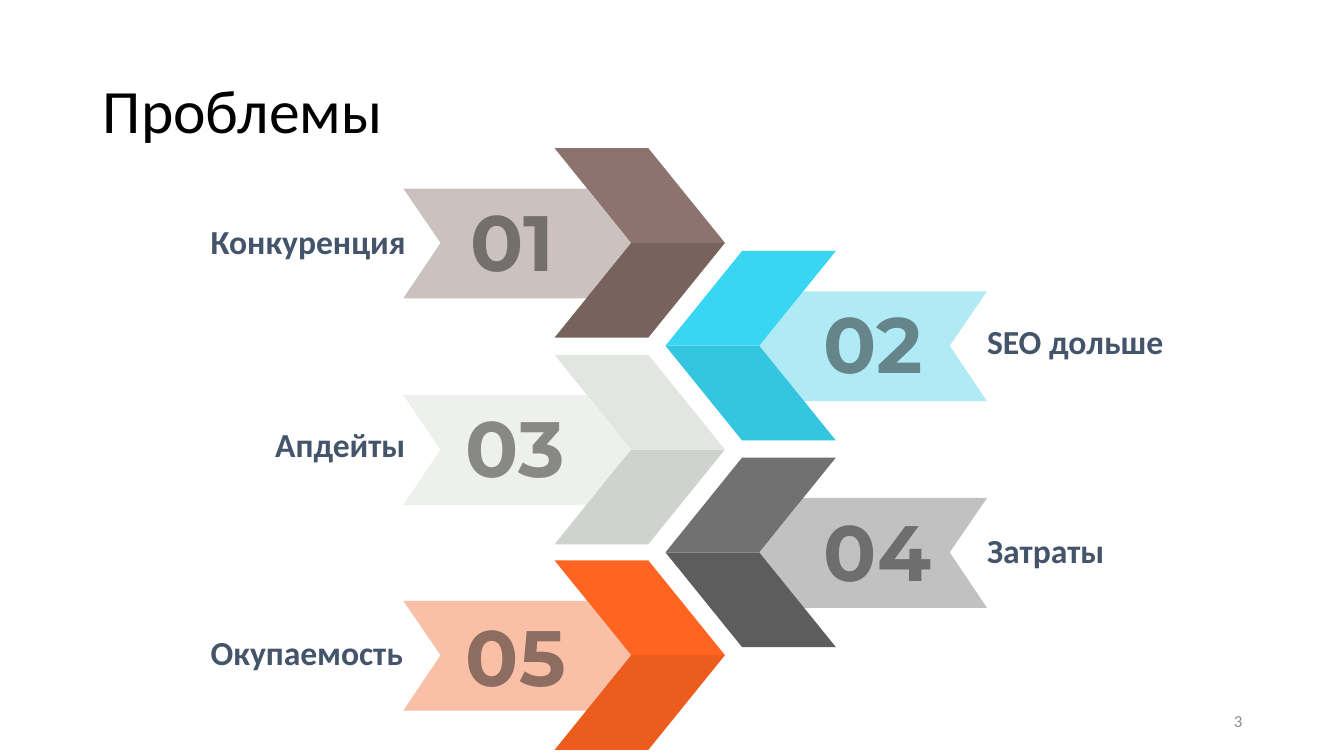
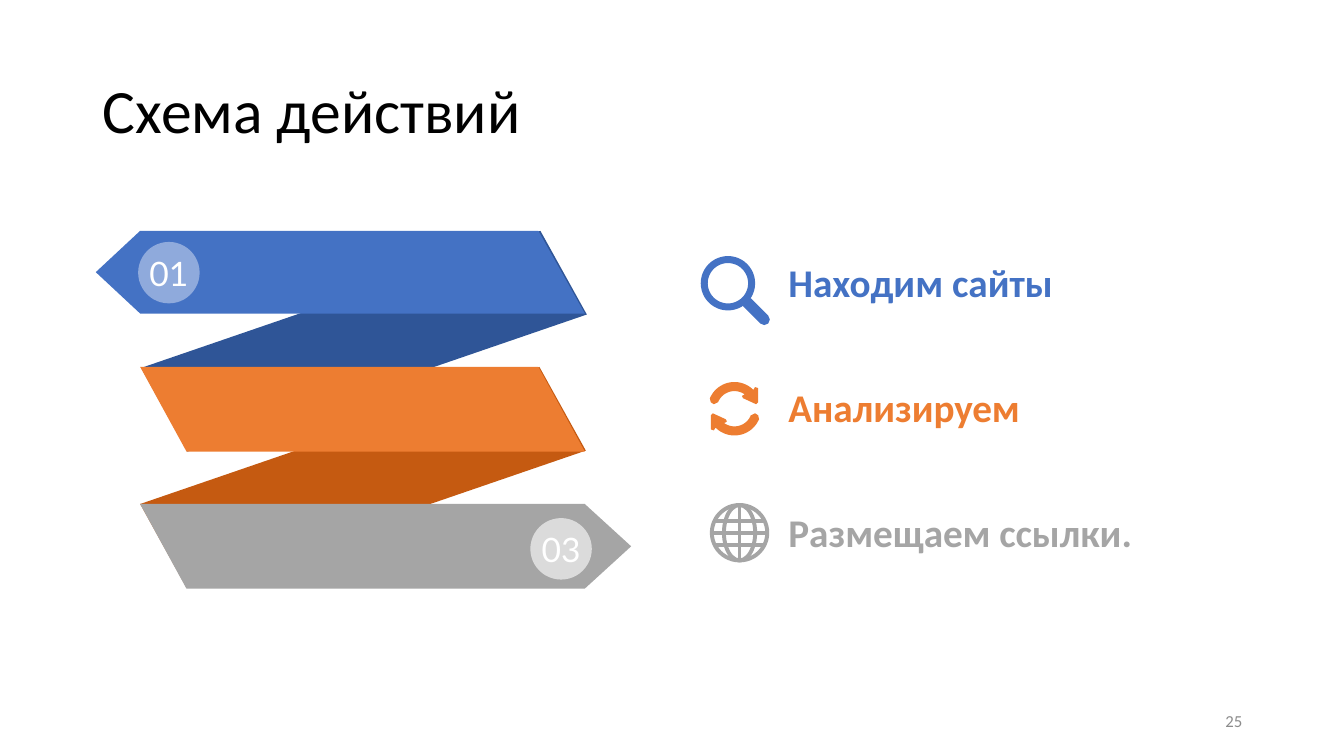
"""Two slides: numbered problem banners and a folded ribbon with three actions."""
from dataclasses import dataclass
from math import cos, radians, sin, sqrt

from lxml.etree import SubElement
from pptx import Presentation
from pptx.dml.color import RGBColor
from pptx.enum.shapes import MSO_CONNECTOR as Connector, MSO_SHAPE as Preset
from pptx.enum.text import MSO_ANCHOR as Anchor, MSO_AUTO_SIZE as AutoSize, PP_ALIGN as Align
from pptx.oxml.ns import qn
from pptx.util import Emu, Pt

PX = 9144
FONT, NUMBER_FONT, BADGE_FONT = "Calibri", "Montserrat", "Lato"
BLACK, WHITE, GRAY = "000000", "FFFFFF", "8C8C8C"
LABEL = "44546A"
BLUE, ORANGE, SILVER = "4472C4", "ED7D31", "A5A5A5"

BANNER_TOP, BANNER_STEP = 147, 102.25
RIBBON = [(32, 40), (76, 94), (32, 149), (-150, 149), (-113, 94), (-150, 40)]
UPPER_CHEVRON = [(0, 0), (93, 0), (169, 94), (76, 94)]
LOWER_CHEVRON = [(76, 94), (169, 94), (93, 188), (0, 188)]
FOLD = [(536, 229), (140, 365), (186, 448), (582, 312)]

Point = tuple[float, float]


@dataclass(frozen=True)
class Style:
    """Look of a one-line text."""
    size: int
    color: str
    font: str = FONT
    bold: bool = False
    align: Align = Align.LEFT
    spacing: float = 1.0


@dataclass(frozen=True)
class Banner:
    """Ribbon with a chevron, a number and a label beside it."""
    label: str
    label_at: Point
    number_at: Point
    number_color: str
    ribbon: str
    upper: str
    lower: str


@dataclass(frozen=True)
class Band:
    """Front strip of the folded ribbon."""
    color: str
    points: list[Point]


@dataclass(frozen=True)
class Badge:
    """Numbered disc on a band."""
    text: str
    left: int
    top: int
    color: str


@dataclass(frozen=True)
class Action:
    """Text line next to an icon."""
    text: str
    top: int
    color: str
    spacing: float = 1.0


BANNERS = [
    Banner("Конкуренция", (209, 219), (467, 192), "746F6D", "CBC2C0", "8C736D", "78625D"),
    Banner("SEO дольше", (979, 318), (817, 293), "65858A", "B0EAF4", "38D6F3", "34C5E0"),
    Banner("Апдейты", (273, 421), (462, 396), "888987", "EEF0ED", "E2E6E0", "CFD3CD"),
    Banner("Затраты", (979, 526), (817, 499), "6E6E6E", "C1C1C1", "717171", "5D5D5D"),
    Banner("Окупаемость", (209, 627), (462, 603), "8D6D60", "F9BFA7", "FF6420", "EC5D1D"),
]
BANDS = [
    Band(BLUE, [(580, 311), (139, 311), (95, 270), (139, 229), (534, 229)]),
    Band(ORANGE, [(580, 448), (185, 448), (139, 364), (534, 364)]),
    Band(SILVER, [(185, 584), (580, 584), (626, 542), (580, 500), (139, 500)]),
]
BADGES = [Badge("01", 137, 240, "8FAADC"), Badge("03", 526, 514, "DBDBDB")]
ACTIONS = [
    Action("Находим сайты", 250, BLUE),
    Action("Анализируем", 370, ORANGE, 1.1),
    Action("Размещаем ссылки.", 498, SILVER),
]


def px(value: float) -> Emu:
    """Turn pixels into EMU."""
    return Emu(round(value * PX))


def rgb(color: str) -> RGBColor:
    """Turn a hex string into a colour."""
    return RGBColor.from_string(color)


def write(shape, text: str, style: Style, anchor=Anchor.TOP, insets: Point = (0, 0)) -> None:
    """Put one styled paragraph into a shape."""
    frame = shape.text_frame
    frame.word_wrap = True
    frame.auto_size = AutoSize.NONE
    frame.vertical_anchor = anchor
    frame.margin_left = frame.margin_right = px(insets[0])
    frame.margin_top = frame.margin_bottom = px(insets[1])
    para = frame.paragraphs[0]
    para.text = text
    para.alignment = style.align
    para.line_spacing = style.spacing
    para.font.name, para.font.size = style.font, Pt(style.size)
    para.font.bold = style.bold
    para.font.color.rgb = rgb(style.color)


def add_text(page, left: int, top: int, width: int, height: int, text: str, style: Style,
             anchor=Anchor.TOP, insets: Point = (0, 0)) -> None:
    """Add a text box."""
    box = page.shapes.add_textbox(px(left), px(top), px(width), px(height))
    write(box, text, style, anchor, insets)


def add_outline(page, points: list[Point], color: str) -> None:
    """Add a filled polygon."""
    corners = [(px(x), px(y)) for x, y in points]
    builder = page.shapes.build_freeform(*corners[0])
    builder.add_line_segments(corners[1:], close=True)
    shape = builder.convert_to_shape()
    shape.shadow.inherit = False
    shape.fill.solid()
    shape.fill.fore_color.rgb = rgb(color)
    shape.line.fill.background()


def add_disc(page, left: float, top: float, width: float, height: float, color: str):
    """Add a filled oval."""
    disc = page.shapes.add_shape(Preset.OVAL, px(left), px(top), px(width), px(height))
    disc.shadow.inherit = False
    disc.fill.solid()
    disc.fill.fore_color.rgb = rgb(color)
    disc.line.fill.background()
    return disc


def add_ring(page, center: Point, width: int, height: int, color: str, weight: float) -> None:
    """Add an unfilled oval around a centre."""
    ring = add_disc(page, center[0] - width / 2, center[1] - height / 2, width, height, color)
    ring.fill.background()
    ring.line.color.rgb = rgb(color)
    ring.line.width = Pt(weight)


def add_line(page, start: Point, end: Point, color: str, weight: float, cap: str = "flat") -> None:
    """Add a straight line without shadow."""
    line = page.shapes.add_connector(Connector.STRAIGHT, *map(px, start + end))
    line.line.color.rgb = rgb(color)
    line.line.width = Pt(weight)
    properties = line.element.spPr
    properties.find(qn("a:ln")).set("cap", cap)
    SubElement(properties, qn("a:effectLst"))


def arc(center: Point, radius: float, first: int, last: int) -> list[Point]:
    """Return points on an arc, angles counted counter-clockwise in degrees."""
    angles = [radians(first + (last - first) * step / 24) for step in range(25)]
    return [(center[0] + radius * cos(a), center[1] - radius * sin(a)) for a in angles]


def add_page(deck, title: str, number: int):
    """Add a slide with its title and page number."""
    page = deck.slides.add_slide(deck.slide_layouts[5])
    heading = page.shapes.title
    heading.left, heading.top, heading.width, heading.height = map(px, (92, 40, 1150, 145))
    write(heading, title, Style(44, BLACK, spacing=0.9), Anchor.MIDDLE, (10, 5))
    add_text(page, 942, 695, 300, 40, str(number), Style(12, GRAY, align=Align.RIGHT),
             Anchor.MIDDLE, (10, 5))
    return page


def add_banner(page, index: int, banner: Banner) -> None:
    """Draw one banner, pointing right and left by turns."""
    origin, side = ((550, 1), (829, -1))[index % 2]
    top = round(BANNER_TOP + BANNER_STEP * index)
    parts = ((RIBBON, banner.ribbon), (LOWER_CHEVRON, banner.lower), (UPPER_CHEVRON, banner.upper))
    for points, color in parts:
        add_outline(page, [(origin + side * x, top + y) for x, y in points], color)
    add_text(page, *banner.number_at, 121, 94, f"{index + 1:02}",
             Style(56, banner.number_color, NUMBER_FONT, True))
    add_text(page, *banner.label_at, 226, 75, banner.label, Style(24, LABEL, bold=True))


def add_magnifier(page, color: str) -> None:
    """Draw the search icon."""
    add_ring(page, (722, 281), 47, 47, color, 5)
    add_line(page, (741, 300), (758, 317), color, 8, "rnd")


def add_cycle(page, color: str) -> None:
    """Draw two arrows chasing each other."""
    center = (728.5, 405.5)
    head = [(749, 384), (752, 385), (752, 399), (750, 401), (737, 395), (736, 393), (737, 392)]
    arrow = arc(center, 26.5, 157, 45) + head + arc(center, 17.5, 54, 158) + [(708, 401), (705, 399)]
    add_outline(page, arrow, color)
    add_outline(page, [(2 * center[0] - x, 2 * center[1] - y) for x, y in arrow], color)


def add_globe(page, color: str) -> None:
    """Draw the globe icon."""
    x, y = center = (733.5, 528.5)
    radius, weight = 27.5, 2.8
    for width in (55, 31):
        add_ring(page, center, width, 55, color, weight)
    add_line(page, (x, y - radius), (x, y + radius), color, weight)
    for shift in (-12, 0, 12):
        half = sqrt(radius ** 2 - shift ** 2)
        add_line(page, (x - half, y + shift), (x + half, y + shift), color, weight)


def add_problems(deck) -> None:
    """Build the slide with five banners."""
    page = add_page(deck, "Проблемы", 3)
    for index, banner in enumerate(BANNERS):
        add_banner(page, index, banner)


def add_scheme(deck) -> None:
    """Build the slide with the folded ribbon and the actions."""
    page = add_page(deck, "Схема действий", 25)
    for index, color in enumerate(("2F5597", "C55A11")):
        add_outline(page, [(x - index, y + 135 * index) for x, y in FOLD], color)
    for band in BANDS:
        add_outline(page, band.points, band.color)
    for badge in BADGES:
        disc = add_disc(page, badge.left, badge.top, 61, 61, badge.color)
        write(disc, badge.text, Style(24, WHITE, BADGE_FONT, align=Align.CENTER), Anchor.MIDDLE)
    for action, add_icon in zip(ACTIONS, (add_magnifier, add_cycle, add_globe)):
        add_icon(page, action.color)
        add_text(page, 770, action.top, 486, 60, action.text,
                 Style(28, action.color, bold=True, spacing=action.spacing), insets=(12, 6))


def main() -> None:
    """Build and save the deck."""
    deck = Presentation()
    deck.slide_width, deck.slide_height = px(1333), px(750)
    add_problems(deck)
    add_scheme(deck)
    deck.save("out.pptx")


if __name__ == "__main__":
    main()
